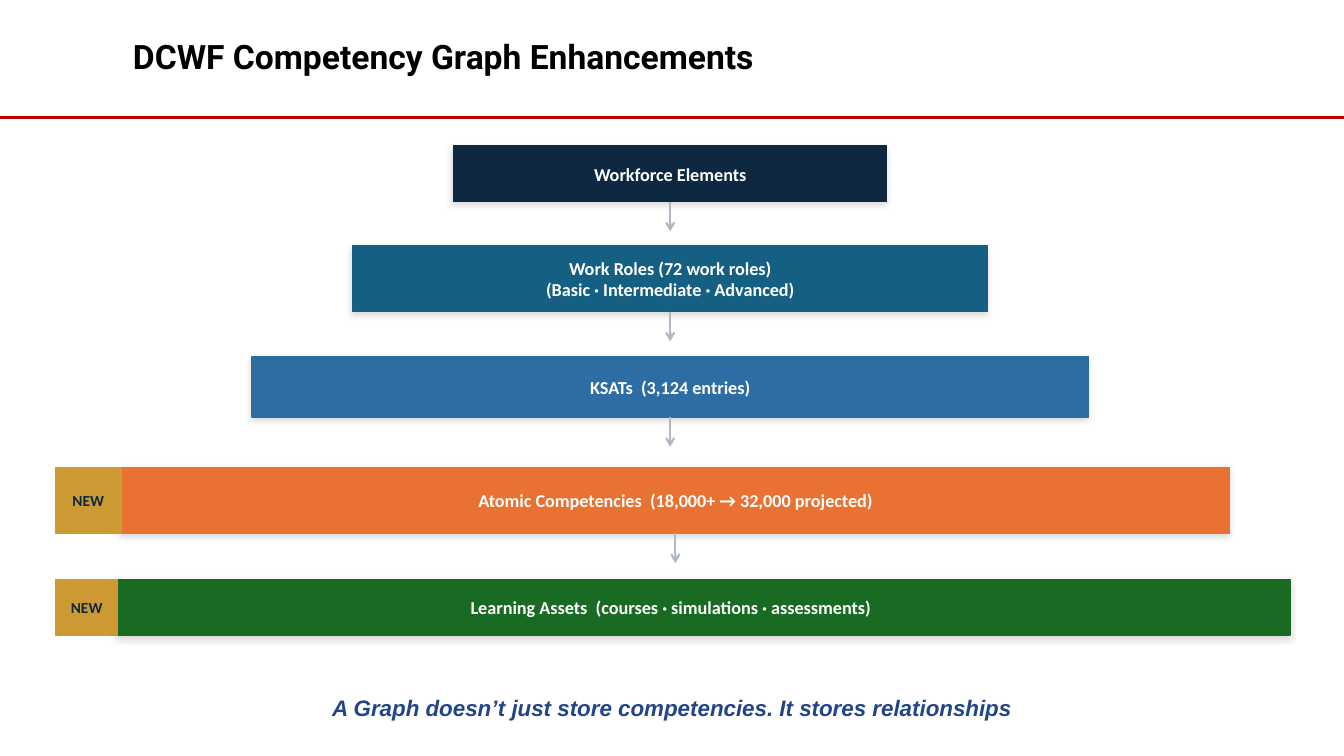
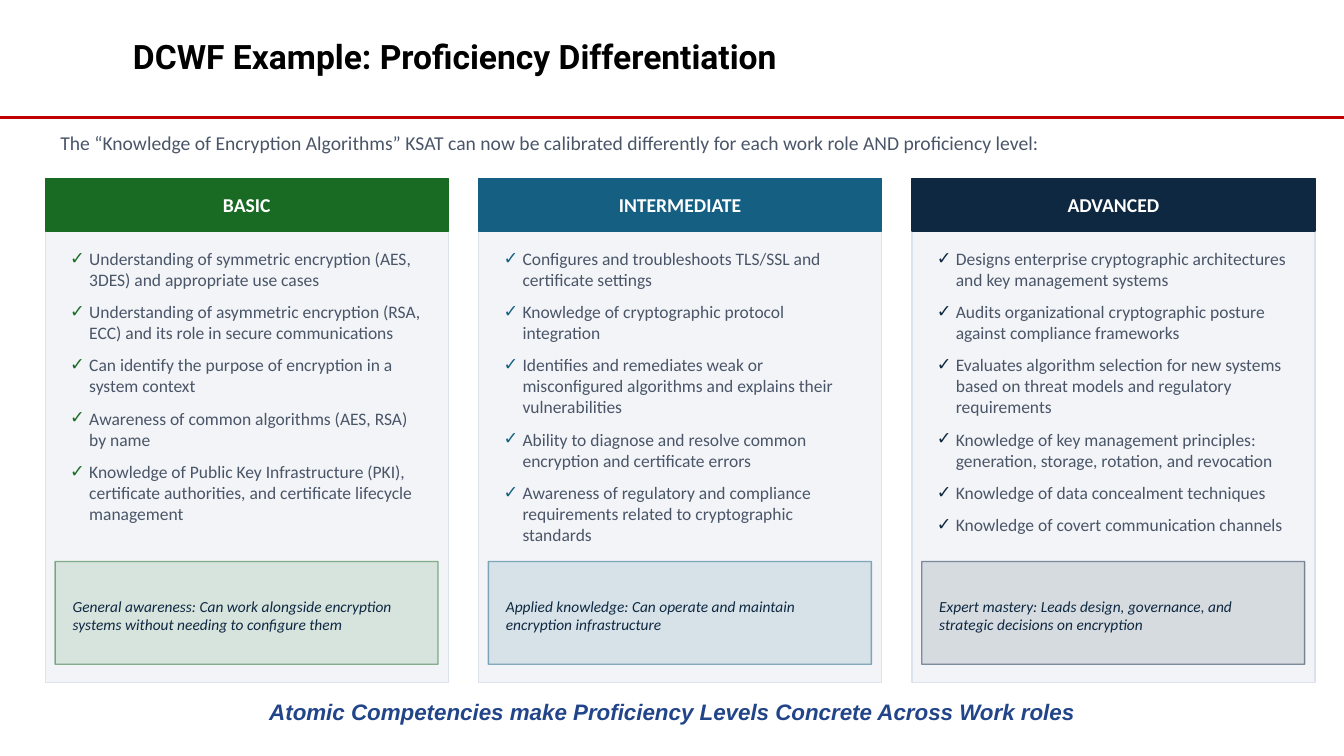
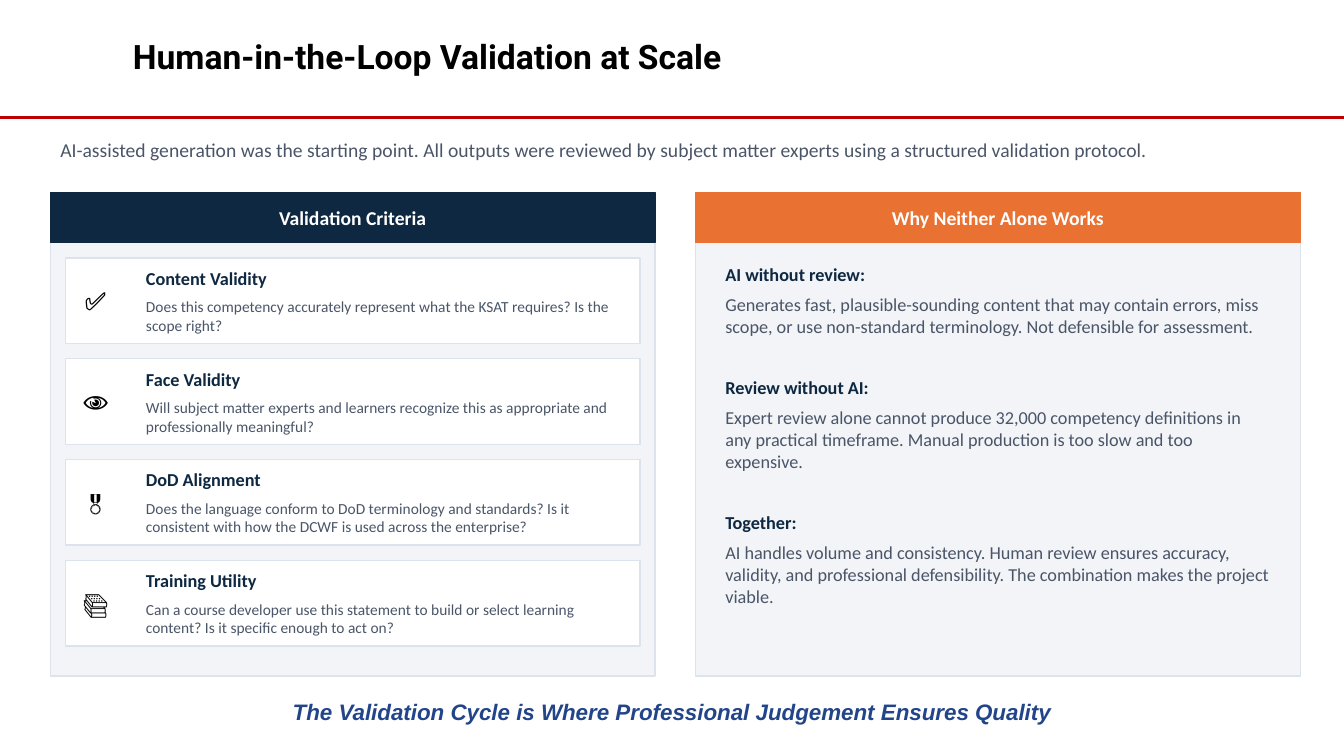
import dataclasses

import lxml.etree
import pptx
import pptx.dml.color
import pptx.enum.shapes
import pptx.enum.text
import pptx.oxml.ns
import pptx.util

Cm = pptx.util.Cm
Pt = pptx.util.Pt
RGBColor = pptx.dml.color.RGBColor
ALIGN = pptx.enum.text.PP_ALIGN
ANCHOR = pptx.enum.text.MSO_ANCHOR
qn = pptx.oxml.ns.qn

BLACK = RGBColor(0x00, 0x00, 0x00)
WHITE = RGBColor(0xFF, 0xFF, 0xFF)
RED = RGBColor(0xC0, 0x00, 0x00)
NAVY = RGBColor(0x0E, 0x28, 0x41)
TEAL = RGBColor(0x15, 0x60, 0x82)
BLUE = RGBColor(0x2E, 0x6D, 0xA4)
ORANGE = RGBColor(0xE9, 0x71, 0x32)
GREEN = RGBColor(0x19, 0x6B, 0x24)
GOLD = RGBColor(0xCC, 0x99, 0x33)
ARROW_GRAY = RGBColor(0xB0, 0xB8, 0xC4)
SLATE = RGBColor(0x4A, 0x55, 0x68)
PANEL_FILL = RGBColor(0xF2, 0xF4, 0xF7)
PANEL_LINE = RGBColor(0xDD, 0xE3, 0xED)
CLOSING_BLUE = RGBColor(0x22, 0x45, 0x8A)

SLIDE_WIDTH, SLIDE_HEIGHT = 33.87, 19.05
DEFAULT_INSETS = (0.25, 0.13, 0.25, 0.13)


@dataclasses.dataclass
class TextStyle:
    """Font and paragraph settings of one kind of text."""
    size: float
    color: RGBColor
    bold: bool = False
    italic: bool = False
    font: str = "Calibri"
    align: int = ALIGN.LEFT
    before: float = 0
    after: float = 0


TITLE = TextStyle(24, BLACK, bold=True, font="Roboto")
CLOSING = TextStyle(16, CLOSING_BLUE, True, True, "Arial", ALIGN.CENTER)
INTRO = TextStyle(14, SLATE)
HEADER = TextStyle(14, WHITE, bold=True, align=ALIGN.CENTER)
LAYER = TextStyle(13, WHITE, bold=True, align=ALIGN.CENTER)
TAG = TextStyle(11, NAVY, bold=True, align=ALIGN.CENTER)
SKILL = TextStyle(12.5, SLATE, after=8)
SUMMARY = TextStyle(11, NAVY, italic=True)
ICON = TextStyle(18, BLACK, font="Roboto", align=ALIGN.CENTER)
CARD_HEADING = TextStyle(13, NAVY, bold=True, after=6)
CARD_BODY = TextStyle(11, SLATE)
REASON_HEADING = TextStyle(13, NAVY, bold=True, before=22, after=6)
REASON_BODY = TextStyle(13, SLATE, after=6)


class Deck:
    """Holds the presentation, its shared style and the current slide."""

    def __init__(self):
        self.presentation = pptx.Presentation()
        self.presentation.slide_width = Cm(SLIDE_WIDTH)
        self.presentation.slide_height = Cm(SLIDE_HEIGHT)
        self.slide = None

    def add_slide(self, title, closing, closing_top=17.45):
        """Start a slide with its title, red rule and closing line."""
        self.slide = self.presentation.slides.add_slide(self.presentation.slide_layouts[5])
        placeholder = self.slide.shapes.title
        placeholder.left, placeholder.top = Cm(3.1), Cm(0.2)
        placeholder.width, placeholder.height = Cm(30.1), Cm(2.57)
        self.set_text(placeholder, [(title, TITLE)])
        placeholder.text_frame.paragraphs[0].line_spacing = 0.9
        self.line(0, 2.96, SLIDE_WIDTH, 2.96, RED, 2)
        self.text(3.53, closing_top, 26.82, 0.94, [(closing, CLOSING)], ANCHOR.TOP)

    def set_text(self, shape, lines, anchor=ANCHOR.MIDDLE, insets=DEFAULT_INSETS, tick=None):
        """Fill a shape with (text, style) paragraphs, ticked if a tick colour is given."""
        frame = shape.text_frame
        frame.word_wrap = True
        frame.auto_size = pptx.enum.text.MSO_AUTO_SIZE.NONE
        frame.vertical_anchor = anchor
        frame.margin_left, frame.margin_top, frame.margin_right, frame.margin_bottom = map(Cm, insets)
        for index, (text, style) in enumerate(lines):
            paragraph = frame.paragraphs[0] if index == 0 else frame.add_paragraph()
            paragraph.text = text
            paragraph.alignment = style.align
            paragraph.space_before = Pt(style.before if index else 0)
            paragraph.space_after = Pt(style.after)
            if tick is not None:
                self.add_tick(paragraph, tick, style.font)
            font = paragraph.font
            font.name, font.size = style.font, Pt(style.size)
            font.bold, font.italic = style.bold, style.italic
            font.color.rgb = style.color

    def add_tick(self, paragraph, color, font_name):
        """Give a paragraph a coloured tick bullet with a hanging indent."""
        properties = paragraph._p.get_or_add_pPr()
        properties.set("marL", str(Cm(0.48)))
        properties.set("indent", str(-Cm(0.48)))
        bullet_color = lxml.etree.SubElement(properties, qn("a:buClr"))
        lxml.etree.SubElement(bullet_color, qn("a:srgbClr"), val=str(color))
        lxml.etree.SubElement(properties, qn("a:buFont"), typeface=font_name)
        lxml.etree.SubElement(properties, qn("a:buChar"), char="✓")

    def text(self, left, top, width, height, lines, anchor=ANCHOR.MIDDLE, **options):
        """Add a text box."""
        shape = self.slide.shapes.add_textbox(Cm(left), Cm(top), Cm(width), Cm(height))
        self.set_text(shape, lines, anchor, **options)

    def box(self, left, top, width, height, fill, outline=None, lines=(), **options):
        """Add a rectangle, outlined in its own colour unless told otherwise."""
        shape = self.slide.shapes.add_shape(
            pptx.enum.shapes.MSO_SHAPE.RECTANGLE, Cm(left), Cm(top), Cm(width), Cm(height))
        shape.shadow.inherit = False
        shape.fill.solid()
        shape.fill.fore_color.rgb = fill
        shape.line.color.rgb = fill if outline is None else outline
        shape.line.width = Pt(1)
        self.set_text(shape, lines, **options)
        return shape

    def add_shadow(self, shape):
        """Give a rectangle a soft shadow."""
        effects = shape.element.spPr.find(qn("a:effectLst"))
        shadow = lxml.etree.SubElement(
            effects, qn("a:outerShdw"), blurRad=str(Pt(5)), dist=str(Pt(2)),
            dir="8100000", algn="bl", rotWithShape="0")
        color = lxml.etree.SubElement(shadow, qn("a:srgbClr"), val=str(BLACK))
        lxml.etree.SubElement(color, qn("a:alpha"), val="15000")

    def set_opacity(self, shape, fill_percent, line_percent):
        """Make the fill and outline of a rectangle see-through."""
        colors = shape.element.spPr.iter(qn("a:srgbClr"))
        for color, percent in zip(list(colors), (fill_percent, line_percent)):
            lxml.etree.SubElement(color, qn("a:alpha"), val=str(percent * 1000))

    def line(self, left, top, right, bottom, color, width):
        """Add a straight line."""
        connector = self.slide.shapes.add_connector(
            pptx.enum.shapes.MSO_CONNECTOR.STRAIGHT, Cm(left), Cm(top), Cm(right), Cm(bottom))
        connector.line.color.rgb = color
        connector.line.width = Pt(width)
        lxml.etree.SubElement(connector.element.spPr, qn("a:effectLst"))
        return connector

    def arrow_below(self, shape, length):
        """Add a downward arrow that starts at the bottom of a shape."""
        center = (shape.left + shape.width / 2) / Cm(1)
        bottom = (shape.top + shape.height) / Cm(1)
        arrow = self.line(center, bottom, center, bottom + length, ARROW_GRAY, 1.5)
        arrow.begin_connect(shape, 2)
        outline = arrow.element.spPr.find(qn("a:ln"))
        lxml.etree.SubElement(outline, qn("a:tailEnd"), type="arrow")

    def intro(self, top, height, text):
        """Add the introductory sentence under the rule."""
        self.text(1.27, top, 31.24, height, [(text, INTRO)])

    def panel(self, left, top, width, height, header_height, title, color):
        """Add a pale panel with a coloured header."""
        self.box(left, top, width, height, PANEL_FILL, PANEL_LINE)
        self.box(left, top, width, header_height, color, lines=[(title, HEADER)])


def build_layers(deck):
    """Build the slide of stacked graph layers."""
    deck.add_slide("DCWF Competency Graph Enhancements",
                   "A Graph doesn’t just store competencies. It stores relationships", 17.37)
    layers = [
        (11.43, 3.68, 10.92, 1.4, NAVY, ["Workforce Elements"], 0.25, None),
        (8.89, 6.2, 16, 1.65, TEAL,
         ["Work Roles (72 work roles)", "(Basic · Intermediate · Advanced)"], 0.25, None),
        (6.35, 8.99, 21.08, 1.52, BLUE, ["KSATs  (3,124 entries)"], 0.25, None),
        (3.05, 11.79, 27.94, 1.65, ORANGE,
         ["Atomic Competencies  (18,000+ → 32,000 projected)"], 0.25, 1.65),
        (2.97, 14.6, 29.54, 1.4, GREEN,
         ["Learning Assets  (courses · simulations · assessments)"], 1.93, 1.57),
    ]
    for index, (left, top, width, height, color, texts, right_inset, tag_width) in enumerate(layers):
        layer = deck.box(left, top, width, height, color, lines=[(text, LAYER) for text in texts],
                         insets=(0.25, 0.13, right_inset, 0.13))
        deck.add_shadow(layer)
        if index < len(layers) - 1:
            deck.arrow_below(layer, 0.75)
        if tag_width:
            deck.box(left - tag_width, top, tag_width, height, GOLD, lines=[("NEW", TAG)])


def build_proficiency(deck):
    """Build the slide that compares three proficiency levels."""
    deck.add_slide("DCWF Example: Proficiency Differentiation",
                   "Atomic Competencies make Proficiency Levels Concrete Across Work roles")
    deck.intro(3.02, 1.14, "The “Knowledge of Encryption Algorithms” KSAT can now be calibrated "
                           "differently for each work role AND proficiency level:")
    levels = [
        ("BASIC", GREEN, [
            "Understanding of symmetric encryption (AES, 3DES) and appropriate use cases",
            "Understanding of asymmetric encryption (RSA, ECC) and its role in secure communications",
            "Can identify the purpose of encryption in a system context",
            "Awareness of common algorithms (AES, RSA) by name",
            "Knowledge of Public Key Infrastructure (PKI), certificate authorities, "
            "and certificate lifecycle management",
        ], "General awareness: Can work alongside encryption systems without needing to configure them"),
        ("INTERMEDIATE", TEAL, [
            "Configures and troubleshoots TLS/SSL and certificate settings",
            "Knowledge of cryptographic protocol integration",
            "Identifies and remediates weak or misconfigured algorithms and explains their vulnerabilities",
            "Ability to diagnose and resolve common encryption and certificate errors",
            "Awareness of regulatory and compliance requirements related to cryptographic standards",
        ], "Applied knowledge: Can operate and maintain encryption infrastructure"),
        ("ADVANCED", NAVY, [
            "Designs enterprise cryptographic architectures and key management systems",
            "Audits organizational cryptographic posture against compliance frameworks",
            "Evaluates algorithm selection for new systems based on threat models "
            "and regulatory requirements",
            "Knowledge of key management principles: generation, storage, rotation, and revocation",
            "Knowledge of data concealment techniques",
            "Knowledge of covert communication channels",
        ], "Expert mastery: Leads design, governance, and strategic decisions on encryption"),
    ]
    for index, (name, color, skills, summary) in enumerate(levels):
        left = 1.14 + 10.92 * index
        deck.panel(left, 4.5, 10.16, 12.7, 1.32, name, color)
        deck.text(left + 0.38, 6.12, 9.4, 7.6, [(skill, SKILL) for skill in skills],
                  ANCHOR.TOP, tick=color)
        note = deck.box(left + 0.25, 14.15, 9.65, 2.59, color, lines=[(summary, SUMMARY)],
                        insets=(0.44, 0.25, 0.44, 0.13))
        deck.set_opacity(note, 12, 50)


def build_validation(deck):
    """Build the slide on validation criteria and their reasons."""
    deck.add_slide("Human-in-the-Loop Validation at Scale",
                   "The Validation Cycle is Where Professional Judgement Ensures Quality")
    deck.intro(3.07, 1.4, "AI-assisted generation was the starting point. All outputs were reviewed "
                          "by subject matter experts using a structured validation protocol.")
    panels = [("Validation Criteria", NAVY), ("Why Neither Alone Works", ORANGE)]
    for index, (title, color) in enumerate(panels):
        deck.panel(1.27 + 16.26 * index, 4.85, 15.24, 12.19, 1.27, title, color)
    criteria = [
        ("✅", "Content Validity",
         "Does this competency accurately represent what the KSAT requires? Is the scope right?"),
        ("👁", "Face Validity",
         "Will subject matter experts and learners recognize this as appropriate "
         "and professionally meaningful?"),
        ("🎖", "DoD Alignment",
         "Does the language conform to DoD terminology and standards? "
         "Is it consistent with how the DCWF is used across the enterprise?"),
        ("📚", "Training Utility",
         "Can a course developer use this statement to build or select learning content? "
         "Is it specific enough to act on?"),
    ]
    for index, (icon, heading, question) in enumerate(criteria):
        top = 6.5 + 2.54 * index
        deck.box(1.65, top, 14.48, 2.16, WHITE, PANEL_LINE,
                 [(heading, CARD_HEADING), (question, CARD_BODY)], insets=(2.03, 0.13, 0.64, 0.13))
        deck.text(1.65, top, 1.52, 2.16, [(icon, ICON)], insets=(0, 0, 0, 0))
    reasons = [
        ("AI without review:",
         "Generates fast, plausible-sounding content that may contain errors, miss scope, "
         "or use non-standard terminology. Not defensible for assessment."),
        ("Review without AI:",
         "Expert review alone cannot produce 32,000 competency definitions in any practical "
         "timeframe. Manual production is too slow and too expensive."),
        ("Together:",
         "AI handles volume and consistency. Human review ensures accuracy, validity, and "
         "professional defensibility. The combination makes the project viable."),
    ]
    lines = [line for heading, body in reasons
             for line in ((heading, REASON_HEADING), (body, REASON_BODY))]
    deck.text(18.03, 6.5, 14.22, 10.16, lines, ANCHOR.TOP)


def main():
    """Build the three slides and save them."""
    deck = Deck()
    build_layers(deck)
    build_proficiency(deck)
    build_validation(deck)
    deck.presentation.save("out.pptx")


if __name__ == "__main__":
    main()
